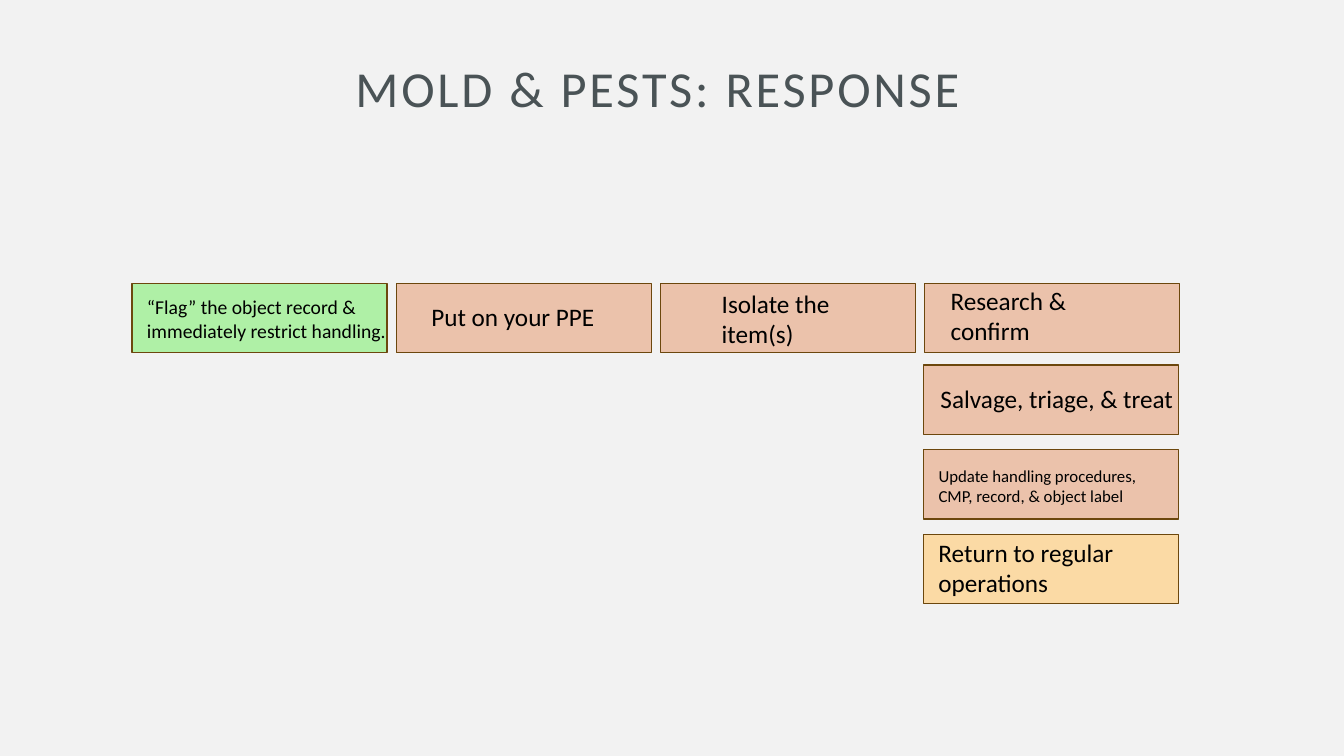
import pptx
import pptx.util
import pptx.dml.color
import pptx.enum.shapes
import pptx.enum.text

Inches = pptx.util.Inches
Pt = pptx.util.Pt

COLORS = {"background": "F2F2F2", "title": "4A5356", "text": "000000", "border": "6C470D",
          "start": "AFF0A6", "step": "EBC2AB", "end": "FBDAA5"}
FONT = "Calibri"
TITLE = "MOLD & PESTS: RESPONSE"

# wording, fill, font size, label (left, top, width, height) with left and top relative to the box
ROW_STEPS = [
    ("“Flag” the object record & immediately restrict handling.", "start", 14, (0.05, 0.07, 2.67, 0.57)),
    ("Put on your PPE", "step", 18, (0.25, 0.13, 2.38, 0.4)),
    ("Isolate the item(s)", "step", 18, (0.51, 0, 1.68, 0.71)),
    ("Research & confirm", "step", 18, (0.16, -0.03, 1.68, 0.71)),
]
COLUMN_STEPS = [
    ("Salvage, triage, & treat", "step", 18, (0.07, 0.13, 2.67, 0.4)),
    ("Update handling procedures, CMP, record, & object label", "step", 12, (0.05, 0.11, 2.49, 0.5)),
    ("Return to regular operations", "end", 18, (0.05, -0.02, 2.3, 0.71)),
]
BOX_W, BOX_H = 2.53, 0.69
ROW_LEFT, ROW_TOP, ROW_PITCH = 1.31, 2.81, 2.62
COLUMN_LEFT, COLUMN_TOP, COLUMN_PITCH = 9.16, 3.62, 0.84


def rgb(name):
    return pptx.dml.color.RGBColor.from_string(COLORS[name])


def add_text(slide, text, left, top, width, height, size, color):
    box = slide.shapes.add_textbox(Inches(left), Inches(top), Inches(width), Inches(height))
    tf = box.text_frame
    tf.word_wrap = True
    p = tf.paragraphs[0]
    p.text = text
    p.font.name = FONT
    p.font.size = Pt(size)
    p.font.color.rgb = rgb(color)
    return tf


def add_title(slide):
    tf = add_text(slide, TITLE, 0.88, 0.52, 11.29, 0.77, 36, "title")
    tf.vertical_anchor = pptx.enum.text.MSO_ANCHOR.MIDDLE
    tf.margin_left = tf.margin_right = Inches(0.2)
    tf.margin_top = tf.margin_bottom = 0
    p = tf.paragraphs[0]
    p.alignment = pptx.enum.text.PP_ALIGN.CENTER
    p.line_spacing = 0.9
    p.runs[0].font._element.set("spc", "200")


def add_step(slide, left, top, text, fill, size, label):
    sp = slide.shapes.add_shape(pptx.enum.shapes.MSO_SHAPE.RECTANGLE,
                                Inches(left), Inches(top), Inches(BOX_W), Inches(BOX_H))
    sp.shadow.inherit = False
    sp.fill.solid()
    sp.fill.fore_color.rgb = rgb(fill)
    sp.line.color.rgb = rgb("border")
    sp.line.width = Pt(1)
    dx, dy, width, height = label
    tf = add_text(slide, text, left + dx, top + dy, width, height, size, "text")
    tf.auto_size = pptx.enum.text.MSO_AUTO_SIZE.SHAPE_TO_FIT_TEXT


def main():
    prs = pptx.Presentation()
    prs.slide_width, prs.slide_height = Inches(13.33), Inches(7.5)
    slide = prs.slides.add_slide(prs.slide_layouts[6])
    slide.background.fill.solid()
    slide.background.fill.fore_color.rgb = rgb("background")

    add_title(slide)
    for i, step in enumerate(ROW_STEPS):
        add_step(slide, ROW_LEFT + i * ROW_PITCH, ROW_TOP, *step)
    for i, step in enumerate(COLUMN_STEPS):
        add_step(slide, COLUMN_LEFT, COLUMN_TOP + i * COLUMN_PITCH, *step)
    prs.save("out.pptx")


if __name__ == "__main__":
    main()
